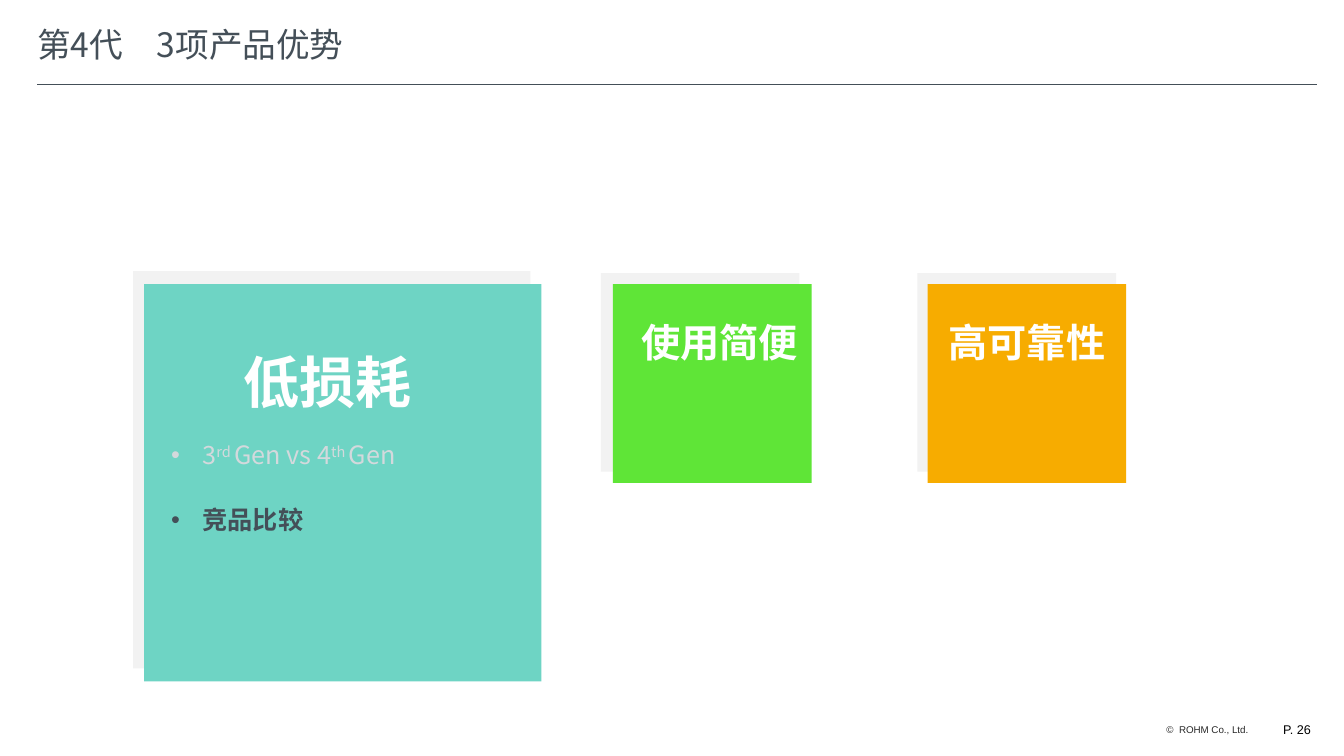
from lxml.etree import SubElement
from pptx import Presentation
from pptx.dml.color import RGBColor
from pptx.enum.shapes import MSO_CONNECTOR, MSO_SHAPE
from pptx.enum.text import MSO_ANCHOR, MSO_AUTO_SIZE, PP_ALIGN
from pptx.oxml.ns import qn
from pptx.util import Inches, Pt

SANS = "Noto Sans CJK SC"
SLATE = "444F58"
WHITE = "FFFFFF"


def color(code):
    return RGBColor.from_string(code)


def style(para, size, tint, bold=False, face=SANS):
    font = para.font
    font.name = face
    font.size = Pt(size)
    font.bold = bold
    font.color.rgb = color(tint)
    SubElement(para._p.pPr.find(qn("a:defRPr")), qn("a:ea"), typeface=face)


def add_title(slide, text):
    title = slide.shapes.title
    title.left, title.top = Inches(0.37), Inches(0.11)
    title.width, title.height = Inches(11.81), Inches(0.65)
    frame = title.text_frame
    frame.text = text
    frame.auto_size = MSO_AUTO_SIZE.NONE
    frame.vertical_anchor = MSO_ANCHOR.MIDDLE
    frame.margin_left = 0
    para = frame.paragraphs[0]
    para.alignment = PP_ALIGN.LEFT
    style(para, 24, SLATE)


def add_rule(slide, left, right, top):
    rule = slide.shapes.add_connector(
        MSO_CONNECTOR.STRAIGHT, Inches(left), Inches(top), Inches(right), Inches(top))
    rule.line.color.rgb = color(SLATE)
    rule.line.width = Pt(1)
    SubElement(rule._element.spPr, qn("a:effectLst"))


def add_box(slide, left, top, width, height, wrap=True):
    box = slide.shapes.add_textbox(
        Inches(left), Inches(top), Inches(width), Inches(height))
    box.text_frame.word_wrap = wrap
    return box.text_frame


def add_note(slide, left, top, width, height, text, size, tint):
    para = add_box(slide, left, top, width, height).paragraphs[0]
    para.text = text
    para.alignment = PP_ALIGN.RIGHT
    style(para, size, tint, face="Arial")


def add_label(slide, left, top, width, height, text, size):
    frame = add_box(slide, left, top, width, height, wrap=False)
    frame.vertical_anchor = MSO_ANCHOR.MIDDLE
    para = frame.paragraphs[0]
    para.text = text
    para.alignment = PP_ALIGN.CENTER
    style(para, size, WHITE, bold=True)


def add_square(slide, left, top, side, fill):
    square = slide.shapes.add_shape(
        MSO_SHAPE.RECTANGLE, Inches(left), Inches(top), Inches(side), Inches(side))
    square.shadow.inherit = False
    square.fill.solid()
    square.fill.fore_color.rgb = color(fill)
    square.line.fill.background()


def add_card(slide, left, side, shift, rise, fill):
    top = 2.82
    add_square(slide, left - shift, top - rise, side, "F2F2F2")
    add_square(slide, left, top, side, fill)


def add_item(para, runs, tint, bold=False, gap=0):
    for text, base in runs:
        run = para.add_run()
        run.text = text
        if base:
            run.font._element.set("baseline", str(base * 1000))
    props = para._p.get_or_add_pPr()
    props.set("marL", str(Inches(0.31)))
    props.set("indent", str(-Inches(0.31)))
    SubElement(props, qn("a:buFont"), typeface="Arial")
    SubElement(props, qn("a:buChar"), char="•")
    para.space_before = Pt(gap)
    style(para, 18, tint, bold)


def add_list(slide):
    frame = add_box(slide, 1.6, 4.31, 3.3, 1.22)
    gens = [("3", 0), ("rd ", 30), ("Gen vs 4", 0), ("th ", 30), ("Gen", 0)]
    add_item(frame.paragraphs[0], gens, "D3D9DC")
    add_item(frame.add_paragraph(), [("竞品比较", 0)], SLATE, bold=True, gap=25)


def main():
    deck = Presentation()
    deck.slide_width, deck.slide_height = Inches(13.33), Inches(7.5)
    slide = deck.slides.add_slide(deck.slide_layouts[5])

    add_note(slide, 11.63, 7.11, 1.47, 0.42, "P. 26", 9, "000000")
    add_note(slide, 8.01, 7.13, 4.47, 0.22, "©  ROHM Co., Ltd.", 7, "272727")
    add_rule(slide, 0.37, 13.06, 0.84)
    add_title(slide, "第4代\u30003项产品优势".replace("\u3000", "　"))

    add_card(slide, 1.43, 3.94, 0.11, 0.13, "6ED4C4")
    add_card(slide, 6.08, 1.97, 0.12, 0.11, "5FE537")
    add_card(slide, 9.2, 1.97, 0.1, 0.11, "F7AC00")

    add_label(slide, 2.31, 3.4, 1.88, 0.77, "低损耗", 40)
    add_label(slide, 6.25, 3.11, 1.77, 0.57, "使用简便", 28)
    add_label(slide, 9.3, 3.11, 1.77, 0.57, "高可靠性", 28)
    add_list(slide)

    deck.save("out.pptx")


if __name__ == "__main__":
    main()
